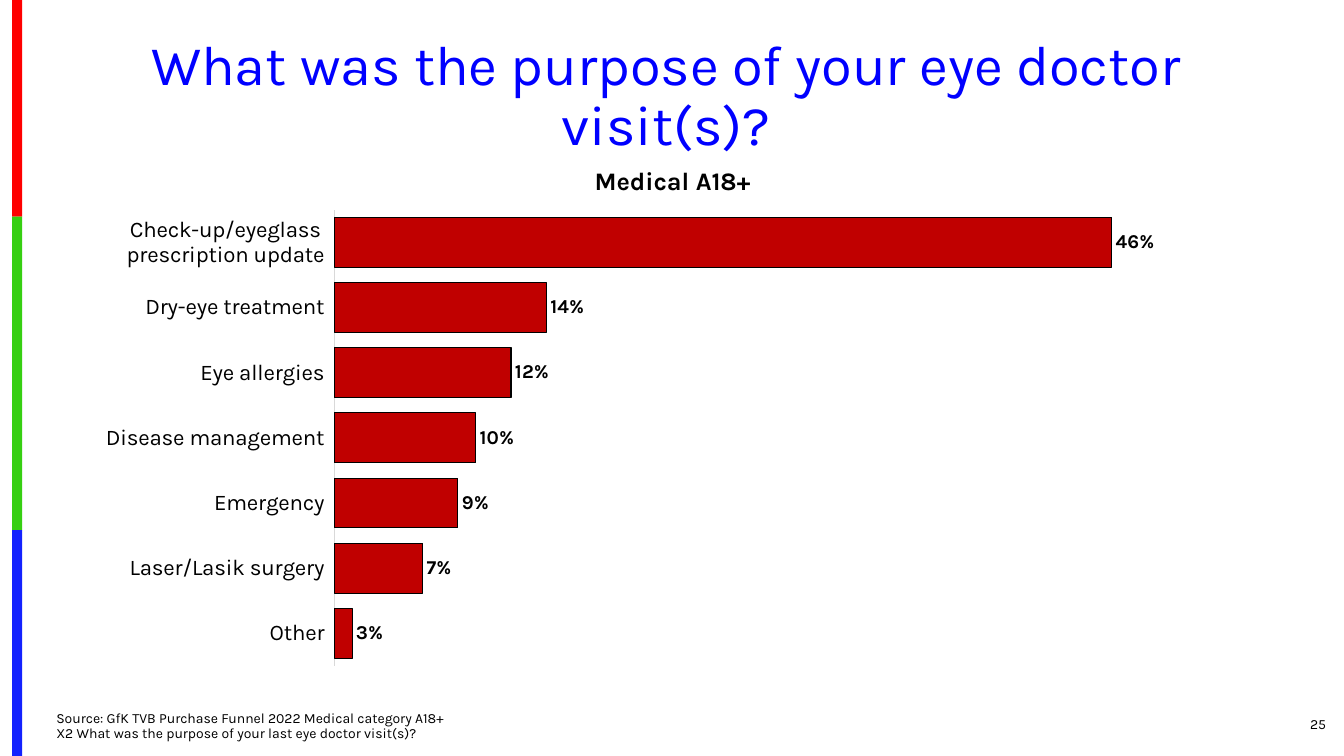
from lxml import etree
from pptx import Presentation
from pptx.chart.data import CategoryChartData
from pptx.dml.color import RGBColor
from pptx.enum.chart import XL_CHART_TYPE as ChartType, XL_LABEL_POSITION as LabelPosition
from pptx.enum.chart import XL_TICK_LABEL_POSITION as TickLabels, XL_TICK_MARK as TickMark
from pptx.enum.shapes import MSO_SHAPE as Shape
from pptx.enum.text import MSO_ANCHOR as Anchor, PP_ALIGN as Align
from pptx.oxml.ns import qn
from pptx.util import Inches, Pt

THEME = {
    "font": "Karla",
    "title": "0000FF", "text": "000000", "bar": "C00000", "axis": "D9D9D9",
    "title_size": 40, "heading_size": 18, "category_size": 16,
    "value_size": 14, "small_size": 10,
}
PURPOSES = [
    ("Check-up/eyeglass prescription update", 0.46),
    ("Dry-eye treatment", 0.14),
    ("Eye allergies", 0.12),
    ("Disease management", 0.10),
    ("Emergency", 0.09),
    ("Laser/Lasik surgery", 0.07),
    ("Other", 0.03),
]
CHART_AREA = (1.05, 1.49, 12, 5.37)
PLOT_AREA = {"x": 0.184, "y": 0.11, "w": 0.661, "h": 0.843}
VALUE_RANGE = (0.02, 0.47)
STRIPES = [("FE0000", 2.15), ("36CF12", 3.11), ("1322FE", 2.24)]
STRIPE_LEFT, STRIPE_WIDTH = 0.12, 0.1
# text, area, size, colour, bold, alignment, anchor, line spacing
TEXTS = [
    ("What was the purpose of your eye doctor visit(s)?", (0.33, 0.31, 12.55, 1.31),
     "title_size", "title", False, Align.CENTER, Anchor.MIDDLE, 0.9),
    ("25", (12.17, 6.98, 1.08, 0.4),
     "small_size", "text", False, Align.RIGHT, Anchor.MIDDLE, 1.0),
    ("Medical A18+", (5.61, 1.59, 2.12, 0.4),
     "heading_size", "text", True, Align.CENTER, Anchor.TOP, 1.0),
    ("Source: GfK TVB Purchase Funnel 2022 Medical category A18+\n"
     "X2 What was the purpose of your last eye doctor visit(s)?", (0.46, 7.01, 9.45, 0.4),
     "small_size", "text", False, Align.LEFT, Anchor.BOTTOM, 0.9),
]


def set_values(target, values):
    for name, value in values.items():
        setattr(target, name, value)


def style_font(font, size, colour="text", bold=False):
    set_values(font, {"name": THEME["font"], "size": Pt(THEME[size]), "bold": bold})
    font.color.rgb = RGBColor.from_string(THEME[colour])


def style_line(line, colour):
    line.color.rgb = RGBColor.from_string(THEME[colour])
    line.width = Pt(0.75)


def add_stripes(page):
    top = 0
    for colour, height in STRIPES:
        stripe = page.shapes.add_shape(
            Shape.RECTANGLE, *map(Inches, (STRIPE_LEFT, top, STRIPE_WIDTH, height)))
        stripe.shadow.inherit = False
        stripe.fill.solid()
        stripe.fill.fore_color.rgb = RGBColor.from_string(colour)
        stripe.line.fill.background()
        top += height


def add_text(page, text, area, size, colour, bold, alignment, anchor, spacing):
    box = page.shapes.add_textbox(*map(Inches, area))
    set_values(box.text_frame, {"word_wrap": True, "vertical_anchor": anchor})
    para = box.text_frame.paragraphs[0]
    para.text = text
    set_values(para, {"alignment": alignment, "line_spacing": spacing})
    for span in para.runs:
        style_font(span.font, size, colour, bold)


def fix_plot_area(chart):
    """Pin the inner plot area to fractions of the chart."""
    plot_area = chart._chartSpace.chart.plotArea
    for old in plot_area.findall(qn("c:layout")):
        plot_area.remove(old)
    layout = etree.Element(qn("c:layout"))
    manual = etree.SubElement(layout, qn("c:manualLayout"))
    settings = {"layoutTarget": "inner", "xMode": "edge", "yMode": "edge", **PLOT_AREA}
    for name, value in settings.items():
        etree.SubElement(manual, qn(f"c:{name}")).set("val", str(value))
    plot_area.insert(0, layout)


def add_purpose_chart(page):
    data = CategoryChartData(number_format="0%")
    bottom_up = PURPOSES[::-1]
    data.categories = [purpose for purpose, share in bottom_up]
    data.add_series("Series 1", [share for purpose, share in bottom_up])
    chart = page.shapes.add_chart(
        ChartType.BAR_CLUSTERED, *map(Inches, CHART_AREA), data).chart
    set_values(chart, {"has_legend": False, "has_title": False})
    style_font(chart.font, "small_size")
    fix_plot_area(chart)

    low, high = VALUE_RANGE
    set_values(chart.value_axis, {
        "minimum_scale": low, "maximum_scale": high,
        "has_major_gridlines": False, "visible": False})
    axis = chart.category_axis
    set_values(axis, {
        "major_tick_mark": TickMark.NONE, "minor_tick_mark": TickMark.NONE,
        "tick_label_position": TickLabels.LOW})
    style_font(axis.tick_labels.font, "category_size")
    style_line(axis.format.line, "axis")

    plot = chart.plots[0]
    set_values(plot, {"gap_width": 31, "vary_by_categories": False, "has_data_labels": True})
    set_values(plot.data_labels, {
        "show_value": True, "number_format": "0%", "number_format_is_linked": False,
        "position": LabelPosition.OUTSIDE_END})
    style_font(plot.data_labels.font, "value_size", bold=True)
    bars = plot.series[0].format
    bars.fill.solid()
    bars.fill.fore_color.rgb = RGBColor.from_string(THEME["bar"])
    style_line(bars.line, "text")


def main():
    deck = Presentation()
    set_values(deck, {"slide_width": Inches(13.33), "slide_height": Inches(7.5)})
    page = deck.slides.add_slide(deck.slide_layouts[6])
    add_stripes(page)
    add_purpose_chart(page)
    for entry in TEXTS:
        add_text(page, *entry)
    deck.save("out.pptx")


if __name__ == "__main__":
    main()
